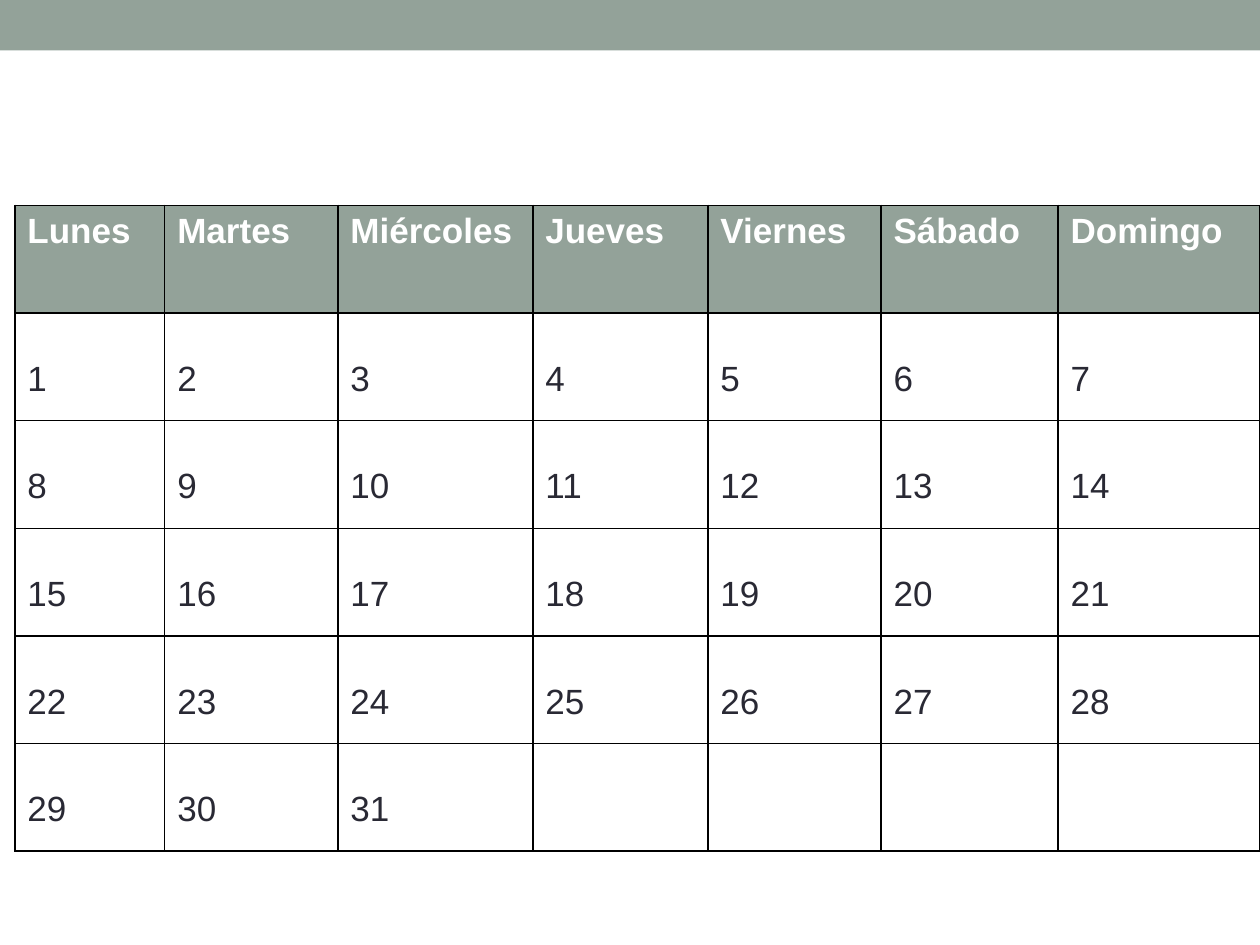
from dataclasses import dataclass

from lxml.etree import SubElement
from pptx import Presentation
from pptx.dml.color import RGBColor
from pptx.enum.shapes import MSO_SHAPE
from pptx.oxml.ns import qn
from pptx.util import Cm, Pt

# Content
WEEKDAYS = ["Lunes", "Martes", "Miércoles", "Jueves", "Viernes", "Sábado", "Domingo"]
DAYS_IN_MONTH = 31
COLUMN_WIDTHS = [3.02, 3.49, 3.93, 3.53, 3.49, 3.57, 4.07]  # cm
ROW_HEIGHT = 2.17  # cm
TABLE_LEFT, TABLE_TOP = 0.3, 4.14  # cm


@dataclass(frozen=True)
class Theme:
    font: str = "Arial"
    size: int = 20
    border_width: int = 1
    sage: str = "93A299"
    white: str = "FFFFFF"
    ink: str = "292934"
    border: str = "000000"


THEME = Theme()


def paint(fill, color):
    fill.solid()
    fill.fore_color.rgb = RGBColor.from_string(color)


def add_borders(cell):
    properties = cell._tc.get_or_add_tcPr()
    for position, side in enumerate(("lnL", "lnR", "lnT", "lnB")):
        line = SubElement(properties, qn(f"a:{side}"), w=str(Pt(THEME.border_width)))
        fill = SubElement(line, qn("a:solidFill"))
        SubElement(fill, qn("a:srgbClr"), val=THEME.border)
        properties.insert(position, line)  # borders come before the fill


def style_cell(cell, text, is_header):
    paint(cell.fill, THEME.sage if is_header else THEME.white)
    add_borders(cell)
    cell.margin_top = Cm(0.13 if is_header else 0.94)
    paragraph = cell.text_frame.paragraphs[0]
    if text:
        paragraph.add_run().text = text
    font = paragraph.font
    font.name, font.size, font.bold = THEME.font, Pt(THEME.size), is_header
    font.color.rgb = RGBColor.from_string(THEME.white if is_header else THEME.ink)


def add_calendar(page):
    columns = len(WEEKDAYS)
    days = [str(day) for day in range(1, DAYS_IN_MONTH + 1)]
    days += [""] * (-len(days) % columns)
    rows = [WEEKDAYS] + [days[i:i + columns] for i in range(0, len(days), columns)]

    table = page.shapes.add_table(
        len(rows), columns, Cm(TABLE_LEFT), Cm(TABLE_TOP),
        Cm(sum(COLUMN_WIDTHS)), Cm(ROW_HEIGHT * len(rows))).table
    table.horz_banding = False
    for column, width in zip(table.columns, COLUMN_WIDTHS):
        column.width = Cm(width)
    for row_index, row in enumerate(rows):
        table.rows[row_index].height = Cm(ROW_HEIGHT)
        for column_index, text in enumerate(row):
            style_cell(table.cell(row_index, column_index), text, row_index == 0)


def main():
    deck = Presentation()
    deck.slide_width, deck.slide_height = Cm(25.4), Cm(19.05)
    page = deck.slides.add_slide(deck.slide_layouts[6])

    # Top band
    band = page.shapes.add_shape(MSO_SHAPE.RECTANGLE, 0, 0, deck.slide_width, Cm(1.02))
    band.shadow.inherit = False
    paint(band.fill, THEME.sage)
    band.line.fill.background()

    # Month calendar
    add_calendar(page)
    deck.save("out.pptx")


if __name__ == "__main__":
    main()
